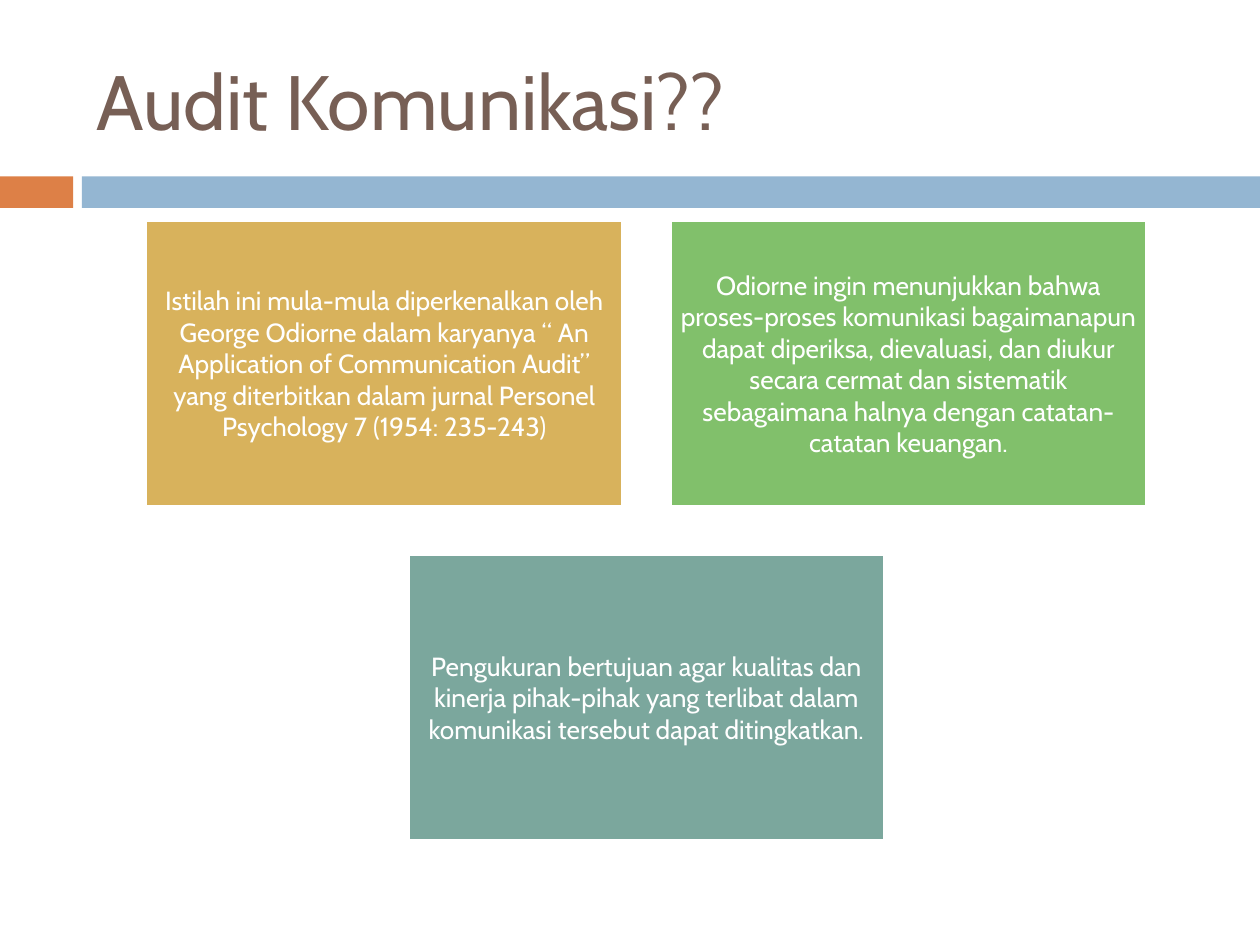
from pptx import Presentation
from pptx.dml.color import RGBColor
from pptx.enum.shapes import MSO_SHAPE
from pptx.enum.text import MSO_ANCHOR, PP_ALIGN
from pptx.util import Inches, Pt

RECTANGLE = MSO_SHAPE.RECTANGLE
MIDDLE = MSO_ANCHOR.MIDDLE
CENTER = PP_ALIGN.CENTER

WHITE = RGBColor(0xFF, 0xFF, 0xFF)
BROWN = RGBColor(0x77, 0x5F, 0x55)
ORANGE = RGBColor(0xDD, 0x80, 0x47)
BLUE = RGBColor(0x94, 0xB6, 0xD2)
GOLD = RGBColor(0xD8, 0xB2, 0x5C)
GREEN = RGBColor(0x81, 0xC0, 0x6B)
TEAL = RGBColor(0x7B, 0xA7, 0x9D)

FONT = "Cabin"
CARD_WIDTH, CARD_HEIGHT, GAP = 3.78, 2.27, 0.38
CARD_LEFT, CARD_TOP = 1.16, 1.75
STEP_X = CARD_WIDTH + GAP
STEP_Y = CARD_HEIGHT + GAP

deck = Presentation()
deck.slide_width = Inches(10)
deck.slide_height = Inches(7.5)
page = deck.slides.add_slide(deck.slide_layouts[6])


def add_rectangle(left, top, width, height, color):
    box = page.shapes.add_shape(
        RECTANGLE, Inches(left), Inches(top), Inches(width), Inches(height)
    )
    box.shadow.inherit = False
    box.fill.solid()
    box.fill.fore_color.rgb = color
    box.line.fill.background()
    return box


def write_text(frame, text, size, color):
    frame.word_wrap = True
    frame.vertical_anchor = MIDDLE
    frame.text = text
    para = frame.paragraphs[0]
    para.font.name = FONT
    para.font.size = Pt(size)
    para.font.color.rgb = color
    return para


add_rectangle(0, 1.4, 0.58, 0.25, ORANGE)
add_rectangle(0.65, 1.4, 9.35, 0.25, BLUE)

title = page.shapes.add_textbox(Inches(0.67), Inches(0.25), Inches(8.92), Inches(1.08))
write_text(title.text_frame, "Audit Komunikasi??", 44, BROWN)

cards = [
    (0, 0, GOLD,
     "Istilah ini mula-mula diperkenalkan oleh George Odiorne dalam karyanya "
     "“ An Application of Communication Audit” yang diterbitkan dalam jurnal "
     "Personel Psychology 7 (1954: 235-243)"),
    (1, 0, GREEN,
     "Odiorne ingin menunjukkan bahwa proses-proses komunikasi bagaimanapun "
     "dapat diperiksa, dievaluasi, dan diukur secara cermat dan sistematik "
     "sebagaimana halnya dengan catatan-catatan keuangan."),
    (0.5, 1, TEAL,
     "Pengukuran bertujuan agar kualitas dan kinerja pihak-pihak yang terlibat "
     "dalam komunikasi tersebut dapat ditingkatkan."),
]

for column, row, color, text in cards:
    card = add_rectangle(
        CARD_LEFT + column * STEP_X, CARD_TOP + row * STEP_Y,
        CARD_WIDTH, CARD_HEIGHT, color,
    )
    card.line.color.rgb = WHITE
    card.line.width = Pt(1.5)
    frame = card.text_frame
    frame.margin_left = frame.margin_right = Inches(0.06)
    frame.margin_top = frame.margin_bottom = Inches(0.06)
    para = write_text(frame, text, 15, WHITE)
    para.alignment = CENTER

deck.save("out.pptx")
